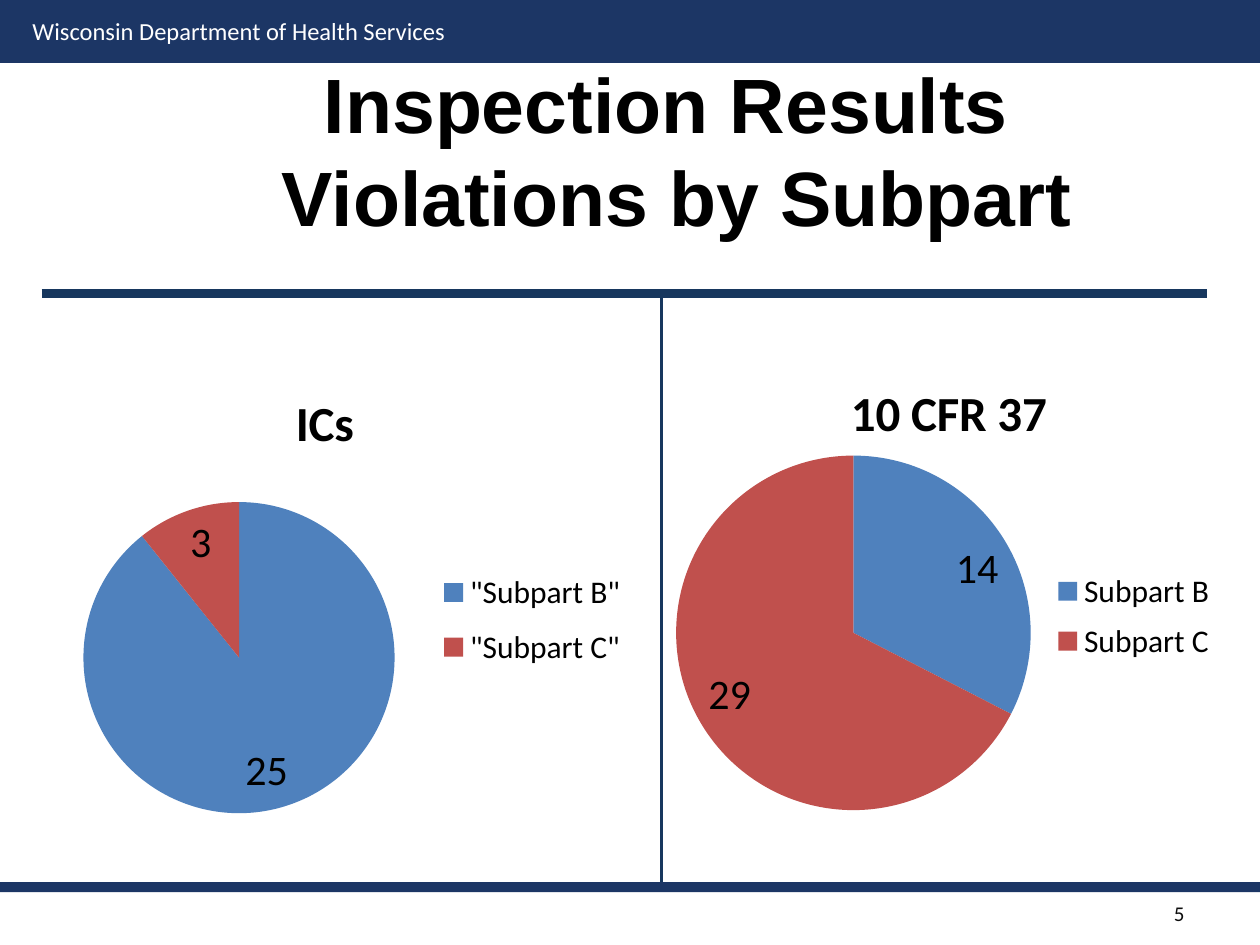
"""Build the slide of inspection violations by subpart, with two pie charts."""
from dataclasses import dataclass

from lxml.etree import Element, SubElement
from pptx import Presentation
from pptx.chart.data import CategoryChartData
from pptx.dml.color import RGBColor
from pptx.enum.chart import XL_CHART_TYPE as ChartType
from pptx.enum.chart import XL_LABEL_POSITION as LabelPos
from pptx.enum.chart import XL_LEGEND_POSITION as LegendPos
from pptx.enum.shapes import MSO_CONNECTOR as Connector
from pptx.enum.shapes import MSO_SHAPE as Shape
from pptx.enum.text import MSO_ANCHOR as Anchor
from pptx.enum.text import MSO_AUTO_SIZE as AutoSize
from pptx.enum.text import PP_ALIGN as Align
from pptx.oxml.ns import qn
from pptx.util import Inches, Pt

NAVY = RGBColor(0x1C, 0x36, 0x65)
RULE_BLUE = RGBColor(0x17, 0x37, 0x5E)
SUBPART_B_BLUE = RGBColor(0x4F, 0x81, 0xBD)
SUBPART_C_RED = RGBColor(0xC0, 0x50, 0x4D)
WHITE = RGBColor(0xFF, 0xFF, 0xFF)
BLACK = RGBColor(0, 0, 0)
NEAR_BLACK = RGBColor(0x0D, 0x0D, 0x0D)

WIDTH, HEIGHT = 10, 7.5
RULE_TOP, FOOTER_TOP, DIVIDER_LEFT = 2.33, 7, 5.25


@dataclass(frozen=True)
class Box:
    """Left, top, width and height in inches, or as shares of a chart."""

    left: float
    top: float
    width: float = 0
    height: float = 0

    def emu(self):
        return [Inches(v) for v in (self.left, self.top, self.width, self.height)]


@dataclass(frozen=True)
class Pie:
    """A violations pie with its place, counts and inner layout shares."""

    title: str
    subparts: tuple[str, str]
    counts: tuple[int, int]
    frame: Box
    title_at: Box
    plot_at: Box
    legend_at: Box


BANDS = (Box(0, FOOTER_TOP, WIDTH, 0.08), Box(0, 0, WIDTH, 0.5))
RULES = (
    (DIVIDER_LEFT, RULE_TOP, DIVIDER_LEFT, FOOTER_TOP, 2),
    (0.33, RULE_TOP, 9.58, RULE_TOP, 5),
)
PIES = (
    Pie("10 CFR 37", ("Subpart B", "Subpart C"), (14, 29),
        Box(5.23, 2.46, 4.54, 4.42), Box(0.32, 0.11),
        Box(0.03, 0.26, 0.62, 0.64), Box(0.67, 0.45, 0.32, 0.2)),
    Pie("ICs", ('"Subpart B"', '"Subpart C"'), (25, 3),
        Box(0.33, 2.58, 4.75, 4), Box(0.41, 0.11),
        Box(0.07, 0.35, 0.52, 0.62), Box(0.65, 0.46, 0.34, 0.25)),
)


def set_font(font, color: RGBColor = BLACK, **values) -> None:
    """Apply a colour and font values."""
    font.color.rgb = color
    for name, value in values.items():
        setattr(font, name, value)


def add_band(slide, box: Box) -> None:
    """Draw a navy band across the slide."""
    band = slide.shapes.add_shape(Shape.RECTANGLE, *box.emu())
    band.shadow.inherit = False
    band.fill.solid()
    band.fill.fore_color.rgb = NAVY
    band.line.fill.background()


def add_rule(slide, x1: float, y1: float, x2: float, y2: float, weight: float) -> None:
    """Draw a straight rule without a shadow."""
    ends = [Inches(v) for v in (x1, y1, x2, y2)]
    rule = slide.shapes.add_connector(Connector.STRAIGHT, *ends)
    rule.line.color.rgb = RULE_BLUE
    rule.line.width = Pt(weight)
    SubElement(rule.element.spPr, qn("a:effectLst"))


def add_label(slide, text: str, box: Box, size: int, color: RGBColor,
              align: Align, anchor: Anchor) -> None:
    """Add a line of running text."""
    frame = slide.shapes.add_textbox(*box.emu()).text_frame
    frame.word_wrap = True
    frame.vertical_anchor = anchor
    frame.text = text
    frame.paragraphs[0].alignment = align
    set_font(frame.paragraphs[0].font, color, size=Pt(size), name="Calibri")


def place(part, index: int, box: Box, inner: bool = False) -> None:
    """Fix a chart part at the given shares of the chart."""
    for old in part.findall(qn("c:layout")):
        part.remove(old)
    layout = Element(qn("c:layout"))
    manual = SubElement(layout, qn("c:manualLayout"))
    values = {"xMode": "edge", "yMode": "edge", "x": box.left, "y": box.top}
    if inner:
        values = {"layoutTarget": "inner", **values}
    if box.width:
        values.update(w=box.width, h=box.height)
    for tag, value in values.items():
        SubElement(manual, qn(f"c:{tag}")).set("val", str(value))
    part.insert(index, layout)


def add_pie(slide, pie: Pie) -> None:
    """Add a pie chart with title, legend and values."""
    data = CategoryChartData()
    data.categories = pie.subparts
    data.add_series("Series 1", pie.counts)
    chart = slide.shapes.add_chart(ChartType.PIE, *pie.frame.emu(), data).chart
    set_font(chart.font, size=Pt(10), name="Calibri")

    chart.has_title = True
    heading = chart.chart_title.text_frame
    heading.text = pie.title
    set_font(heading.paragraphs[0].runs[0].font, size=Pt(28), bold=True, name="Calibri")

    chart.has_legend = True
    chart.legend.position = LegendPos.RIGHT
    chart.legend.include_in_layout = False
    set_font(chart.legend.font, size=Pt(18), name="Calibri")

    plot = chart.plots[0]
    plot.vary_by_categories = True
    series = plot.series[0]
    for index, color in enumerate((SUBPART_B_BLUE, SUBPART_C_RED)):
        fill = series.points[index].format.fill
        fill.solid()
        fill.fore_color.rgb = color
    labels = series.data_labels
    labels.show_value = True
    labels.position = LabelPos.INSIDE_END
    set_font(labels.font, size=Pt(24), name="Calibri")

    for tag, index, box in (("title", 1, pie.title_at), ("plotArea", 0, pie.plot_at),
                            ("legend", 1, pie.legend_at)):
        part = chart.element.xpath(f"c:chart/c:{tag}")[0]
        place(part, index, box, inner=tag == "plotArea")


def add_title(slide, text: str, box: Box) -> None:
    """Move and format the title placeholder."""
    title = slide.shapes.title
    title.left, title.top, title.width, title.height = box.emu()
    frame = title.text_frame
    frame.text = text
    frame.auto_size = AutoSize.NONE
    frame.vertical_anchor = Anchor.MIDDLE
    paragraph = frame.paragraphs[0]
    paragraph.alignment = Align.CENTER
    for run in paragraph.runs:
        set_font(run.font, size=Pt(44), bold=True, name="Arial")


def main() -> None:
    """Assemble and save the slide."""
    deck = Presentation()
    deck.slide_width, deck.slide_height = Inches(WIDTH), Inches(HEIGHT)
    slide = deck.slides.add_slide(deck.slide_layouts[5])
    for band in BANDS:
        add_band(slide, band)
    add_label(slide, "Wisconsin Department of Health Services", Box(0.16, 0.08, 3.6, 0.34),
              14, WHITE, Align.LEFT, Anchor.TOP)
    add_title(slide, "Inspection Results \vViolations by Subpart", Box(1.25, 0.62, 8.25, 1.13))
    add_label(slide, "5", Box(8.92, 7.08, 0.58, 0.34), 12, NEAR_BLACK,
              Align.RIGHT, Anchor.MIDDLE)
    for pie in PIES:
        add_pie(slide, pie)
    for rule in RULES:
        add_rule(slide, *rule)
    deck.save("out.pptx")


if __name__ == "__main__":
    main()
